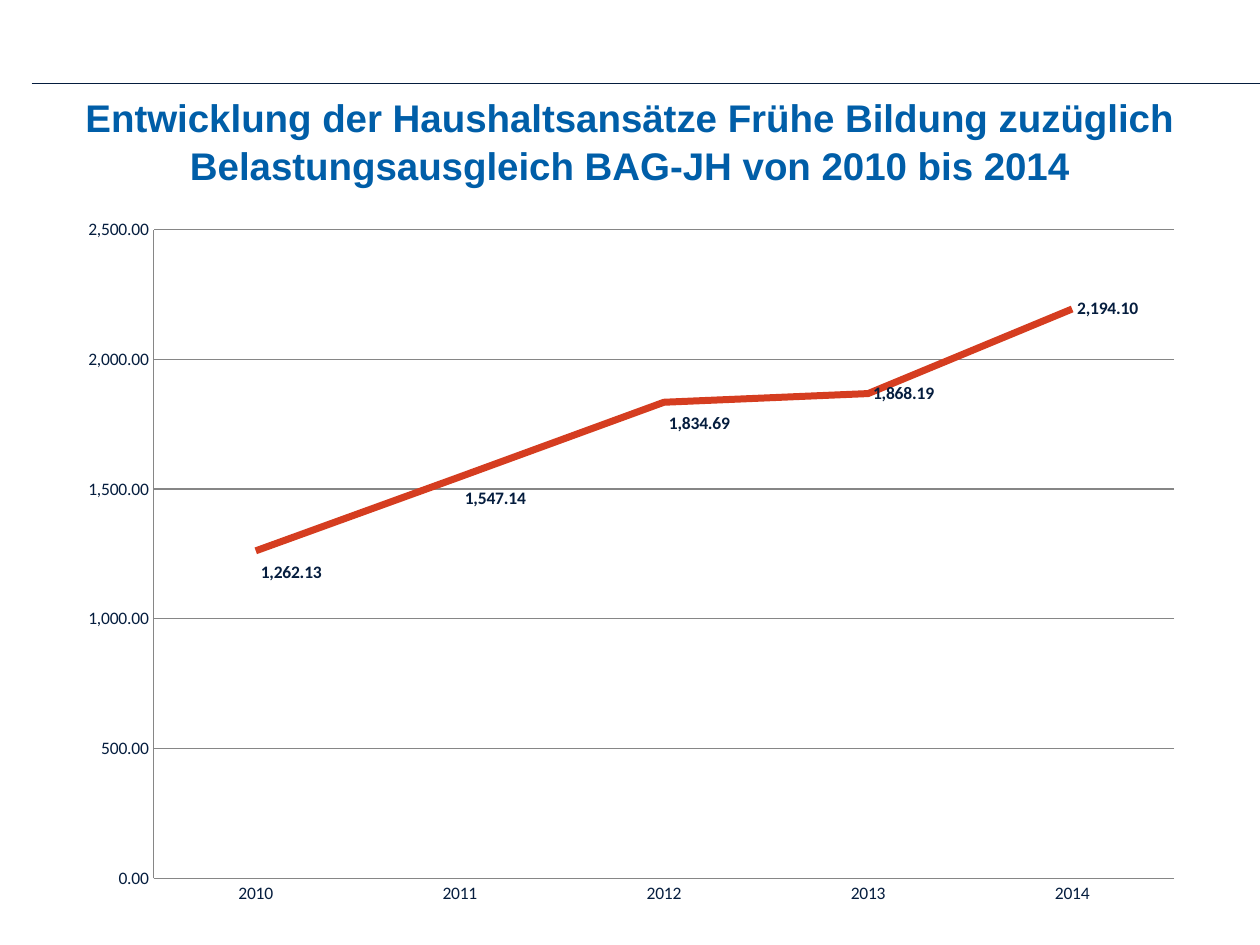
from dataclasses import dataclass

from lxml.etree import SubElement
from pptx import Presentation
from pptx.chart.data import CategoryChartData
from pptx.dml.color import RGBColor as Rgb
from pptx.enum.chart import XL_CHART_TYPE as Kind
from pptx.enum.chart import XL_LABEL_POSITION as Spot
from pptx.enum.chart import XL_MARKER_STYLE as Mark
from pptx.enum.chart import XL_TICK_MARK as Tick
from pptx.enum.shapes import MSO_CONNECTOR as Link
from pptx.enum.text import MSO_ANCHOR as Anchor
from pptx.enum.text import PP_ALIGN as Align
from pptx.oxml import parse_xml
from pptx.oxml.ns import nsdecls, qn
from pptx.util import Cm, Pt


@dataclass(frozen=True)
class Theme:
    ink: str = "051D3E"
    blue: str = "005EA8"
    red: str = "D53D20"
    grid: str = "868686"
    head: str = "Arial"
    body: str = "Calibri"
    big: float = 22
    small: float = 10


THEME = Theme()
FORMAT = "#,##0.00"
YEARS = ["2010", "2011", "2012", "2013", "2014"]
BUDGET = [1262.13, 1547.14, 1834.69, 1868.19, 2194.1]
# Labels moved down, as a share of the chart height
DROPS = [0.03, 0.03, 0.03]


def style(font, size=THEME.small, face=THEME.body, color=THEME.ink, bold=False):
    font.size, font.name, font.bold = Pt(size), face, bold
    font.color.rgb = Rgb.from_string(color)


def stroke(line, color, width):
    line.color.rgb = Rgb.from_string(color)
    line.width = Pt(width)


def write(slide, box, text, align=Align.CENTER, gap=1.04, **form):
    frame = slide.shapes.add_textbox(*map(Cm, box)).text_frame
    frame.word_wrap = True
    frame.vertical_anchor = Anchor.TOP
    para = frame.paragraphs[0]
    para.alignment, para.line_spacing = align, gap
    run = para.add_run()
    run.text = text
    style(run.font, **form)


def layout(**parts):
    root = parse_xml(f"<c:layout {nsdecls('c')}><c:manualLayout/></c:layout>")
    for name, value in parts.items():
        SubElement(root[0], qn(f"c:{name}")).set("val", str(value))
    return root


def header(slide, box):
    left, top, width, height = box
    # Rule that runs off to the right edge
    rule = slide.shapes.add_connector(
        Link.STRAIGHT, Cm(left), Cm(top), Cm(left + width), Cm(top))
    stroke(rule.line, THEME.ink, 0.5)
    SubElement(rule._element.spPr, qn("a:effectLst"))
    # Title
    inset = 0.63
    write(slide, (left + inset, top + 0.05, width - 2 * inset - 0.64, height),
          "Entwicklung der Haushaltsansätze Frühe Bildung zuzüglich "
          "Belastungsausgleich BAG-JH von 2010 bis 2014",
          size=THEME.big, face=THEME.head, color=THEME.blue, bold=True)


def trend(slide, box):
    data = CategoryChartData(number_format=FORMAT)
    data.categories = YEARS
    data.add_series("Series 1", BUDGET)
    chart = slide.shapes.add_chart(Kind.LINE, *map(Cm, box), data).chart
    chart.has_legend = chart.has_title = False
    style(chart.font)
    area = chart._chartSpace.chart.plotArea
    for old in area.findall(qn("c:layout")):
        area.remove(old)
    area.insert(0, layout(layoutTarget="inner", xMode="edge", yMode="edge",
                          x=0.08, y=0.03, w=0.9, h=0.91))

    # Axes
    for axis in (chart.category_axis, chart.value_axis):
        axis.major_tick_mark = axis.minor_tick_mark = Tick.NONE
        stroke(axis.format.line, THEME.grid, 0.75)
        style(axis.tick_labels.font)
    scale = chart.value_axis
    scale.minimum_scale, scale.maximum_scale, scale.major_unit = 0, 2500, 500
    scale.tick_labels.number_format = FORMAT
    scale.tick_labels.number_format_is_linked = False
    scale.has_major_gridlines = True
    stroke(scale.major_gridlines.format.line, THEME.grid, 0.75)

    # Line and its labels
    plot = chart.plots[0]
    plot.vary_by_categories = False
    series = plot.series[0]
    series.smooth = False
    series.marker.style = Mark.NONE
    stroke(series.format.line, THEME.red, 4)
    labels = series.data_labels
    labels.show_value = True
    labels.number_format, labels.number_format_is_linked = FORMAT, False
    labels.position = Spot.RIGHT
    style(labels.font, bold=True)
    for i, drop in enumerate(DROPS):
        label = series.points[i].data_label
        style(label.font, bold=True)
        label.position = Spot.RIGHT
        mark = labels._element.findall(qn("c:dLbl"))[i]
        mark.insert(1, layout(x=0, y=drop))


def main():
    deck = Presentation()
    deck.slide_width, deck.slide_height = Cm(25.4), Cm(19.05)
    slide = deck.slides.add_slide(deck.slide_layouts[6])
    header(slide, (0.64, 1.69, 24.76, 2.44))
    trend(slide, (1.27, 4.2, 22.86, 14.37))
    deck.save("out.pptx")


if __name__ == "__main__":
    main()
